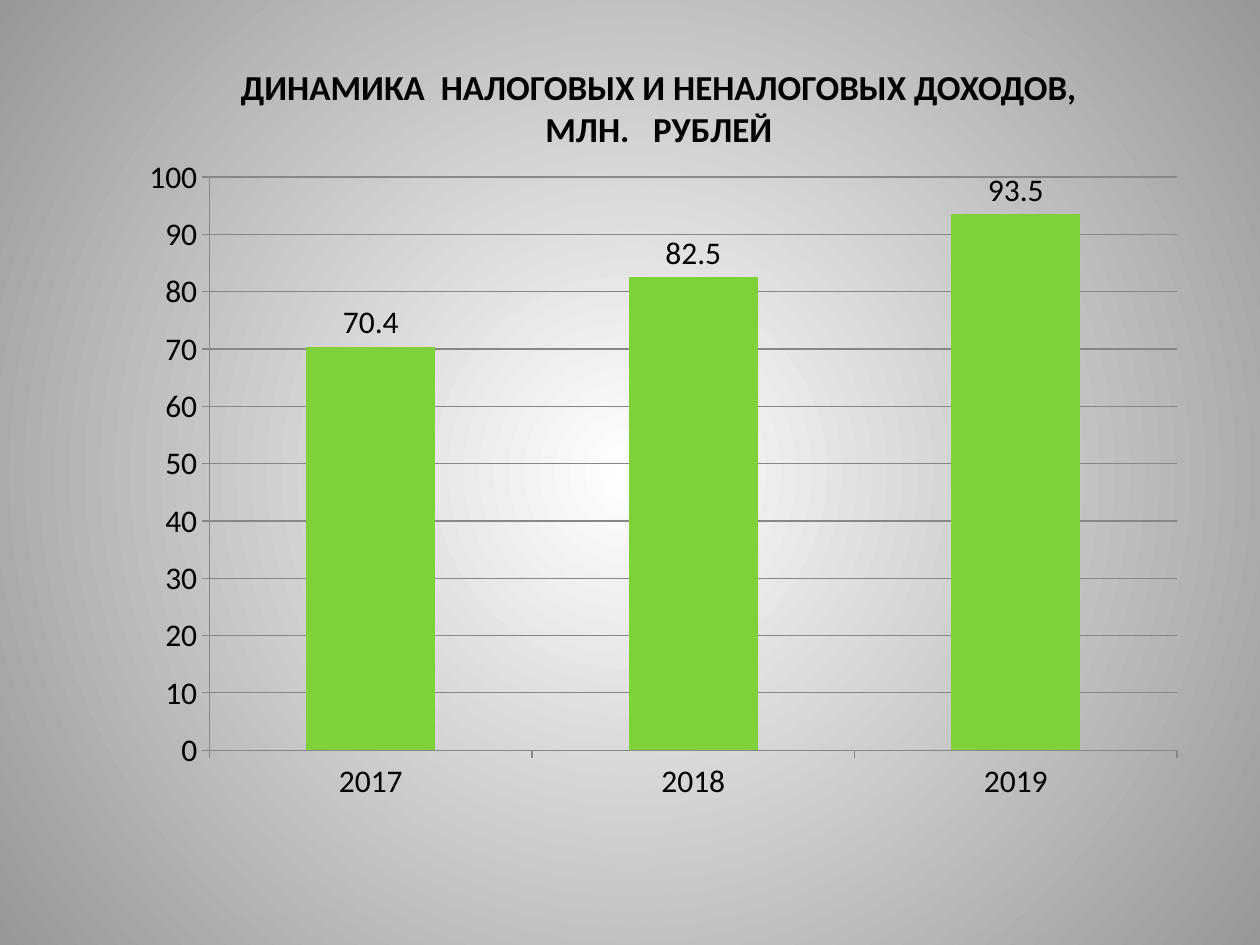
import pptx
import pptx.util
import pptx.chart.data
import pptx.dml.color
import pptx.enum.chart
import pptx.enum.text
import pptx.oxml
import pptx.oxml.ns

Pt = pptx.util.Pt
RGBColor = pptx.dml.color.RGBColor
qn = pptx.oxml.ns.qn

BLACK = RGBColor(0x00, 0x00, 0x00)
WHITE = RGBColor(0xFF, 0xFF, 0xFF)
GREY = RGBColor(0x97, 0x97, 0x97)
LINE = RGBColor(0x87, 0x87, 0x87)
GREEN = RGBColor(0x7F, 0xD1, 0x3B)
FONT = "Calibri"

prs = pptx.Presentation()
prs.slide_width, prs.slide_height = Pt(720), Pt(540)
s = prs.slides.add_slide(prs.slide_layouts.get_by_name("Title Only"))

# Background: circular gradient from the centre
fill = s.background.fill
fill.gradient()
for stop, position, color in zip(fill.gradient_stops, (0, 1), (WHITE, GREY)):
    stop.position = position
    stop.color.rgb = color
lin = next(s._element.iter(qn("a:lin")))
lin.getparent().replace(lin, pptx.oxml.parse_xml(
    '<a:path xmlns:a="http://schemas.openxmlformats.org/drawingml/2006/main" path="circle">'
    '<a:fillToRect l="50000" t="50000" r="50000" b="50000"/></a:path>'))

# Title
sp = s.shapes.title
sp.left, sp.top, sp.width, sp.height = Pt(112.3), Pt(33.8), Pt(528.5), Pt(55.4)
tf = sp.text_frame
tf.text = "ДИНАМИКА  НАЛОГОВЫХ И НЕНАЛОГОВЫХ ДОХОДОВ,\nМЛН.   РУБЛЕЙ"
tf.word_wrap = True
tf.auto_size = pptx.enum.text.MSO_AUTO_SIZE.NONE
tf.vertical_anchor = pptx.enum.text.MSO_ANCHOR.TOP
for p in tf.paragraphs:
    p.alignment = pptx.enum.text.PP_ALIGN.CENTER
    p.space_before = Pt(0)
    p.font.name, p.font.size, p.font.bold = FONT, Pt(20), True
    p.font.color.rgb = BLACK

# Column chart
data = pptx.chart.data.CategoryChartData(number_format="General")
data.categories = ["2017", "2018", "2019"]
data.add_series("Series 1", (70.4, 82.5, 93.5))
chart = s.shapes.add_chart(
    pptx.enum.chart.XL_CHART_TYPE.COLUMN_CLUSTERED,
    Pt(33.8), Pt(78.5), Pt(646.6), Pt(405.4), data).chart
chart.has_title = False
chart.has_legend = False
chart.font.name, chart.font.size = FONT, Pt(18)
chart.font.color.rgb = BLACK

# Columns and value labels
plot = chart.plots[0]
plot.gap_width = 150
plot.vary_by_categories = False
series = plot.series[0]
series.format.fill.solid()
series.format.fill.fore_color.rgb = GREEN
labels = series.data_labels
labels.show_value = True
labels.position = pptx.enum.chart.XL_LABEL_POSITION.OUTSIDE_END

# Axes and gridlines
value_axis = chart.value_axis
value_axis.minimum_scale, value_axis.maximum_scale, value_axis.major_unit = 0, 100, 10
value_axis.has_major_gridlines = True
for axis in (chart.category_axis, value_axis):
    axis.major_tick_mark = pptx.enum.chart.XL_TICK_MARK.OUTSIDE
    axis.minor_tick_mark = pptx.enum.chart.XL_TICK_MARK.NONE
for part in (chart.category_axis, value_axis, value_axis.major_gridlines):
    part.format.line.color.rgb = LINE
    part.format.line.width = Pt(0.75)

# Fixed inner plot area
plot_area = next(chart._chartSpace.iter(qn("c:plotArea")))
for old in plot_area.findall(qn("c:layout")):
    plot_area.remove(old)
plot_area.insert(0, pptx.oxml.parse_xml(
    '<c:layout xmlns:c="http://schemas.openxmlformats.org/drawingml/2006/chart">'
    '<c:manualLayout><c:layoutTarget val="inner"/>'
    '<c:xMode val="edge"/><c:yMode val="edge"/>'
    '<c:x val="0.133"/><c:y val="0.056"/><c:w val="0.855"/><c:h val="0.808"/>'
    '</c:manualLayout></c:layout>'))

prs.save("out.pptx")
